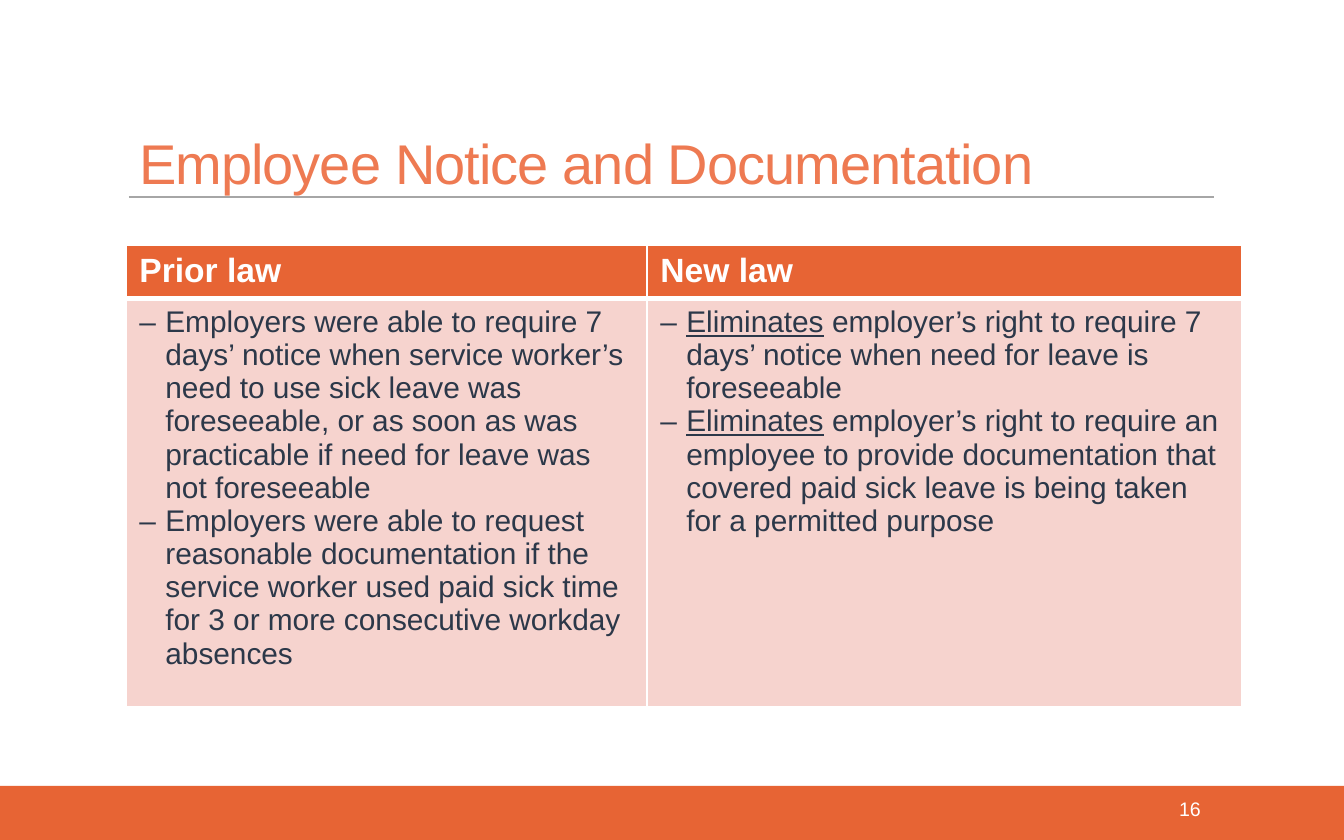
from dataclasses import dataclass

from lxml.etree import SubElement
from pptx import Presentation
from pptx.dml.color import RGBColor as RGB
from pptx.enum.shapes import MSO_CONNECTOR as CONNECTOR, MSO_SHAPE as SHAPE
from pptx.enum.text import MSO_ANCHOR as ANCHOR, MSO_AUTO_SIZE as AUTOSIZE, PP_ALIGN as ALIGN
from pptx.oxml.ns import qn
from pptx.util import Pt

PX = 914400 / 134.4


@dataclass(frozen=True)
class Theme:
    font: str = "Arial"
    accent: str = "E76434"
    title: str = "EE7A52"
    rule: str = "A6A6A6"
    body_fill: str = "F6D3CE"
    ink: str = "2C3849"
    white: str = "FFFFFF"
    title_pt: float = 30
    head_pt: float = 18
    body_pt: float = 16
    number_pt: float = 10.5


T = Theme()


def px(*values):
    """Turn pixel lengths into a list of EMU lengths."""
    return [round(v * PX) for v in values]


def add_run(p, text, size, color, bold=False, underline=False):
    r = p.add_run()
    r.text = text
    f = r.font
    f.name, f.size, f.bold, f.underline = T.font, Pt(size), bold, underline
    f.color.rgb = RGB.from_string(color)
    return r


prs = Presentation()
prs.slide_width, prs.slide_height = px(1344, 840)
s = prs.slides.add_slide(prs.slide_layouts[5])

# Footer band and title rule
band = s.shapes.add_shape(SHAPE.RECTANGLE, *px(0, 786, 1344, 54))
band.shadow.inherit = False
band.fill.solid()
band.fill.fore_color.rgb = RGB.from_string(T.accent)
band.line.fill.background()

rule = s.shapes.add_connector(CONNECTOR.STRAIGHT, *px(129, 197, 1214, 197))
rule.line.color.rgb = RGB.from_string(T.rule)
rule.line.width = Pt(1)
SubElement(rule._element.spPr, qn("a:effectLst"))

# Title
title = s.shapes.title
title.left, title.top, title.width, title.height = px(126, 130, 1085, 53)
tf = title.text_frame
tf.auto_size = AUTOSIZE.NONE
tf.vertical_anchor = ANCHOR.TOP
tf.margin_left, tf.margin_top, tf.margin_right, tf.margin_bottom = px(13, 9, 13, 0)
p = tf.paragraphs[0]
p.alignment = ALIGN.LEFT
p.line_spacing = 0.85
r = add_run(p, "Employee Notice and Documentation", T.title_pt, T.title)
r.font._element.set("spc", "-50")

# Slide number
number = s.shapes.add_textbox(*px(1070, 787, 144, 44))
tf = number.text_frame
tf.word_wrap = True
tf.vertical_anchor = ANCHOR.MIDDLE
p = tf.paragraphs[0]
p.alignment = ALIGN.RIGHT
add_run(p, "16", T.number_pt, T.white)

# Comparison table: each bullet is (underlined lead, rest)
columns = [
    ("Prior law", 521, [
        ("", "Employers were able to require 7 days’ notice when service worker’s need to use "
             "sick leave was foreseeable, or as soon as was practicable if need for leave was "
             "not foreseeable"),
        ("", "Employers were able to request reasonable documentation if the service worker "
             "used paid sick time for 3 or more consecutive workday absences"),
    ]),
    ("New law", 595, [
        ("Eliminates", " employer’s right to require 7 days’ notice when need for leave is "
                       "foreseeable"),
        ("Eliminates", " employer’s right to require an employee to provide documentation that "
                       "covered paid sick leave is being taken for a permitted purpose"),
    ]),
]
table = s.shapes.add_table(2, 2, *px(126, 245, 1116, 457)).table
table.rows[0].height, table.rows[1].height = px(49, 408)
indent = px(26)[0]

for c, (heading, width, bullets) in enumerate(columns):
    table.columns[c].width = px(width)[0]
    head, body = table.cell(0, c), table.cell(1, c)
    for cell, fill, thick_side in ((head, T.accent, "lnB"), (body, T.body_fill, "lnT")):
        tcPr = cell._tc.get_or_add_tcPr()
        for side in ("lnL", "lnR", "lnT", "lnB"):
            ln = SubElement(tcPr, qn(f"a:{side}"), w=str(Pt(3 if side == thick_side else 1)))
            SubElement(SubElement(ln, qn("a:solidFill")), qn("a:srgbClr"), val=T.white)
        cell.fill.solid()
        cell.fill.fore_color.rgb = RGB.from_string(fill)

    add_run(head.text_frame.paragraphs[0], heading, T.head_pt, T.white, bold=True)

    tf = body.text_frame
    for i, (lead, rest) in enumerate(bullets):
        p = tf.add_paragraph() if i else tf.paragraphs[0]
        p.level = 1
        pPr = p._p.get_or_add_pPr()
        pPr.set("marL", str(indent))
        pPr.set("indent", str(-indent))
        SubElement(pPr, qn("a:buFont"), typeface=T.font)
        SubElement(pPr, qn("a:buChar"), char="–")
        if lead:
            add_run(p, lead, T.body_pt, T.ink, underline=True)
        add_run(p, rest, T.body_pt, T.ink)

prs.save("out.pptx")
